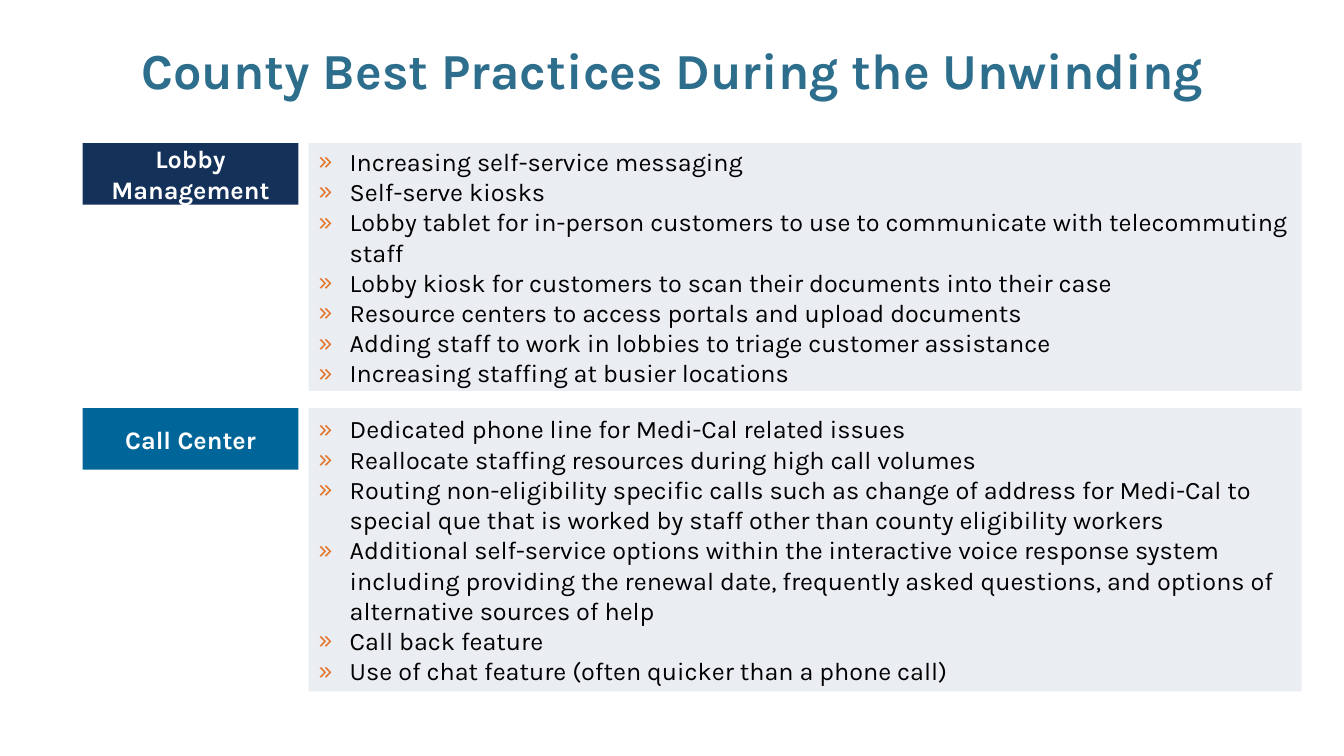
from dataclasses import dataclass

import pptx
import pptx.dml.color
import pptx.enum.shapes
import pptx.enum.text
import pptx.util
from lxml import etree

PP_ALIGN = pptx.enum.text.PP_ALIGN
MIDDLE = pptx.enum.text.MSO_ANCHOR.MIDDLE


@dataclass(frozen=True)
class Theme:
    """Fonts, colours and sizes of the slide."""
    font: str = "Karla"
    title: str = "2D6E8D"
    navy: str = "14315A"
    blue: str = "006699"
    panel: str = "EAEDF2"
    bullet: str = "E47225"
    white: str = "FFFFFF"
    black: str = "000000"
    title_size: int = 36
    body_size: int = 18
    indent: float = 0.31


class PracticeSlide:
    """Draws elements on a grid of 100 columns by 100 rows."""

    def __init__(self, prs, theme):
        """Add a title-only slide."""
        self.prs = prs
        self.theme = theme
        self.slide = prs.slides.add_slide(prs.slide_layouts[5])

    def box(self, x, y, w, h):
        """Convert columns and rows to slide lengths."""
        col, row = self.prs.slide_width / 100, self.prs.slide_height / 100
        return round(x * col), round(y * row), round(w * col), round(h * row)

    def style(self, p, size, color, bold, align):
        """Format a paragraph and its runs."""
        p.alignment = align
        for r in p.runs:
            r.font.name = self.theme.font
            r.font.size = pptx.util.Pt(size)
            r.font.bold = bold
            r.font.color.rgb = pptx.dml.color.RGBColor.from_string(color)

    def title(self, text, x, y, w, h):
        """Place the slide title."""
        sp = self.slide.shapes.title
        sp.left, sp.top, sp.width, sp.height = self.box(x, y, w, h)
        tf = sp.text_frame
        tf.text = text
        tf.word_wrap = True
        tf.vertical_anchor = MIDDLE
        p = tf.paragraphs[0]
        p.line_spacing = 0.9
        self.style(p, self.theme.title_size, self.theme.title, True, PP_ALIGN.CENTER)

    def block(self, text, fill, x, y, w, h):
        """Add a filled rectangle with text and return its text frame."""
        sp = self.slide.shapes.add_shape(
            pptx.enum.shapes.MSO_SHAPE.RECTANGLE, *self.box(x, y, w, h))
        sp.shadow.inherit = False
        sp.fill.solid()
        sp.fill.fore_color.rgb = pptx.dml.color.RGBColor.from_string(fill)
        sp.line.fill.background()
        tf = sp.text_frame
        tf.text = text
        tf.word_wrap = True
        tf.vertical_anchor = MIDDLE
        return tf

    def label(self, text, fill, x, y, w, h):
        """Add a bold section label."""
        tf = self.block(text, fill, x, y, w, h)
        self.style(tf.paragraphs[0], self.theme.body_size, self.theme.white,
                   True, PP_ALIGN.CENTER)

    def bullets(self, items, x, y, w, h):
        """Add a panel of bulleted practices."""
        tf = self.block("\n".join(items), self.theme.panel, x, y, w, h)
        for p in tf.paragraphs:
            self.bullet(p)
            self.style(p, self.theme.body_size, self.theme.black, False, PP_ALIGN.LEFT)

    def bullet(self, p):
        """Give a paragraph a hanging coloured bullet."""
        pPr = p._p.get_or_add_pPr()
        indent = pptx.util.Inches(self.theme.indent)
        pPr.set("marL", str(indent))
        pPr.set("indent", str(-indent))
        ns = pptx.oxml.ns.qn
        clr = etree.SubElement(pPr, ns("a:buClr"))
        etree.SubElement(clr, ns("a:srgbClr"), val=self.theme.bullet)
        etree.SubElement(pPr, ns("a:buFont"), typeface=self.theme.font)
        etree.SubElement(pPr, ns("a:buChar"), char="»")


def main():
    """Build and save the slide."""
    prs = pptx.Presentation()
    prs.slide_width = pptx.util.Inches(13.33)
    prs.slide_height = pptx.util.Inches(7.5)
    theme = Theme()
    page = PracticeSlide(prs, theme)
    page.title("County Best Practices During the Unwinding", 6.9, 2.27, 86.27, 14.93)

    sections = [
        ("Lobby Management", theme.navy, 32.8, [
            "Increasing self-service messaging",
            "Self-serve kiosks",
            "Lobby tablet for in-person customers to use to communicate with "
            "telecommuting staff",
            "Lobby kiosk for customers to scan their documents into their case",
            "Resource centers to access portals and upload documents",
            "Adding staff to work in lobbies to triage customer assistance",
            "Increasing staffing at busier locations",
        ]),
        ("Call Center", theme.blue, 37.47, [
            "Dedicated phone line for Medi-Cal related issues",
            "Reallocate staffing resources during high call volumes",
            "Routing non-eligibility specific calls such as change of address for "
            "Medi-Cal to special que that is worked by staff other than county "
            "eligibility workers",
            "Additional self-service options within the interactive voice response "
            "system including providing the renewal date, frequently asked questions, "
            "and options of alternative sources of help",
            "Call back feature",
            "Use of chat feature (often quicker than a phone call)",
        ]),
    ]
    left, label_w, label_h, panel_w = 6.15, 16.05, 8.13, 73.89
    col_gap, row_gap = 0.76, 2.27
    top = 18.93
    for name, fill, height, items in sections:
        page.label(name, fill, left, top, label_w, label_h)
        page.bullets(items, left + label_w + col_gap, top, panel_w, height)
        top += height + row_gap

    prs.save("out.pptx")


if __name__ == "__main__":
    main()
